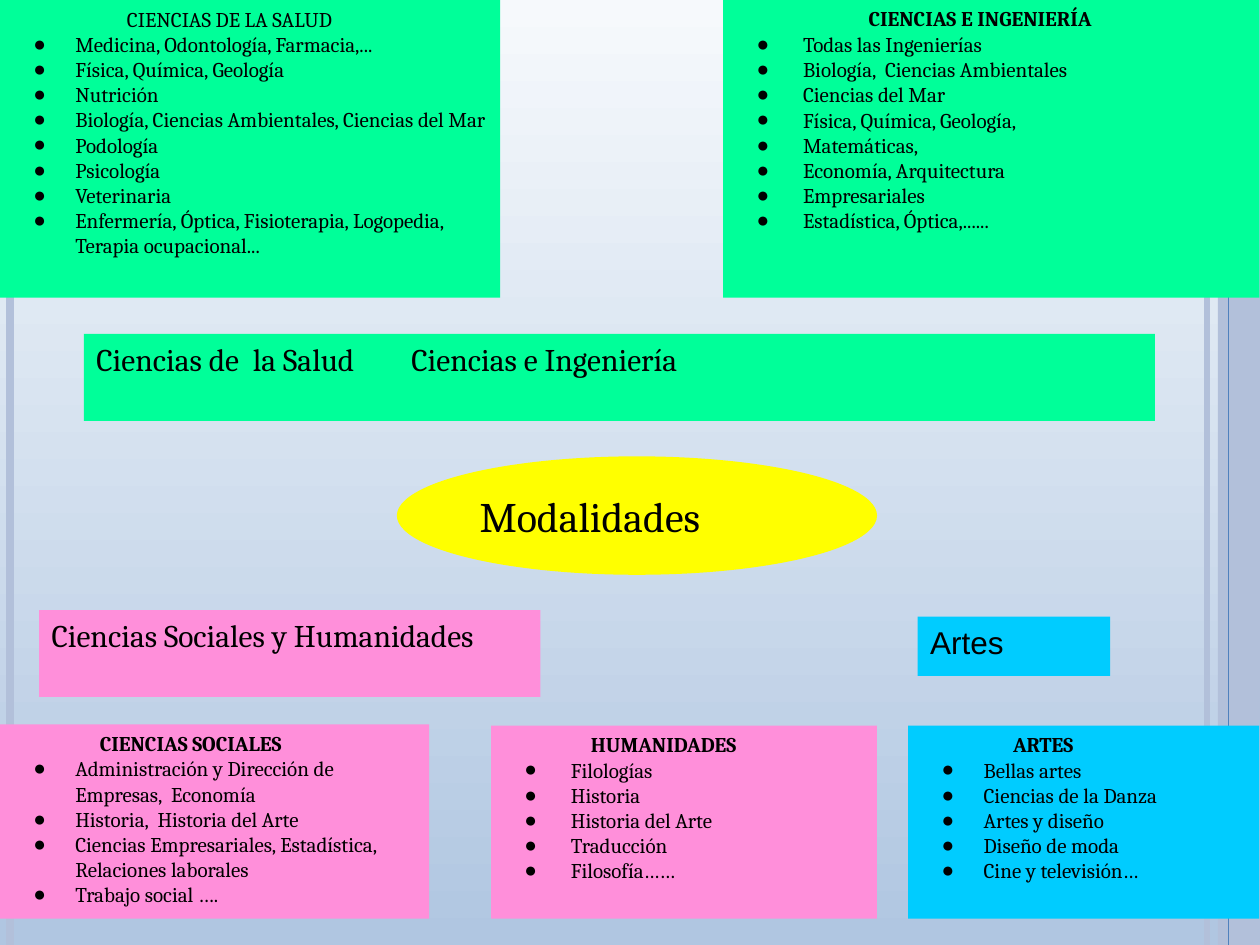
"""Build the slide of study options grouped by school track."""
from dataclasses import dataclass

from lxml import etree
from pptx import Presentation
from pptx.dml.color import RGBColor
from pptx.enum.shapes import MSO_CONNECTOR, MSO_SHAPE
from pptx.enum.text import MSO_ANCHOR, PP_ALIGN
from pptx.oxml.ns import qn
from pptx.util import Pt

RECTANGLE = MSO_SHAPE.RECTANGLE
OVAL = MSO_SHAPE.OVAL
STRAIGHT = MSO_CONNECTOR.STRAIGHT
TOP = MSO_ANCHOR.TOP
MIDDLE = MSO_ANCHOR.MIDDLE
LEFT = PP_ALIGN.LEFT
BLANK_LAYOUT = 6


@dataclass(frozen=True)
class Theme:
    """Colours, fonts, type sizes and insets of the slide."""
    sky: str = "F6F9FC"
    dusk: str = "B0C6E1"
    rail: str = "B2C0DA"
    blue: str = "4F81BD"
    green: str = "00FF99"
    pink: str = "FF8FDA"
    cyan: str = "00CCFF"
    yellow: str = "FFFF00"
    ink: str = "000000"
    serif: str = "Cambria"
    sans: str = "Arial"
    hub_size: float = 24
    track_size: float = 18
    list_size: float = 12
    inset_x: float = 7.2
    inset_y: float = 3.6
    bullet_at: float = 12


THEME = Theme()
WIDTH, HEIGHT = 720, 540

RAILS = [
    (689.8, THEME.rail, 3),
    (5.8, THEME.rail, 4.5),
    (707.8, THEME.blue, 1.5),
]

HEALTH = ["Medicina, Odontología, Farmacia,...", "Física, Química, Geología", "Nutrición",
          "Biología, Ciencias Ambientales, Ciencias del Mar", "Podología", "Psicología",
          "Veterinaria",
          "Enfermería, Óptica, Fisioterapia, Logopedia, Terapia ocupacional..."]
ENGINEERING = ["Todas las Ingenierías", "Biología,  Ciencias Ambientales", "Ciencias del Mar",
               "Física, Química, Geología,", "Matemáticas,", "Economía, Arquitectura",
               "Empresariales", "Estadística, Óptica,......"]
SOCIAL = ["Administración y Dirección de Empresas,  Economía",
          "Historia,  Historia del Arte",
          "Ciencias Empresariales, Estadística, Relaciones laborales",
          "Trabajo social …."]
HUMANITIES = ["Filologías", "Historia", "Historia del Arte", "Traducción", "Filosofía……"]
ARTS = ["Bellas artes", "Ciencias de la Danza", "Artes y diseño", "Diseño de moda",
        "Cine y televisión…"]


def color(code):
    """Turn a hex code into a colour."""
    return RGBColor.from_string(code)


def paint_background(page):
    """Fill the page with a top-to-bottom gradient."""
    fill = page.background.fill
    fill.gradient()
    fill.gradient_angle = 270
    for stop, code in zip(fill.gradient_stops, (THEME.sky, THEME.dusk)):
        stop.color.rgb = color(code)


def add_rail(page, x, code, weight):
    """Draw a full-height vertical line."""
    rail = page.shapes.add_connector(STRAIGHT, Pt(x), Pt(0), Pt(x), Pt(HEIGHT))
    rail.line.color.rgb = color(code)
    rail.line.width = Pt(weight)
    etree.SubElement(rail._element.spPr, qn("a:effectLst"))


def set_frame(shape, anchor=TOP, top=THEME.inset_y):
    """Set wrapping, anchor and insets of a text frame."""
    frame = shape.text_frame
    frame.word_wrap = True
    frame.vertical_anchor = anchor
    frame.margin_left = frame.margin_right = Pt(THEME.inset_x)
    frame.margin_top, frame.margin_bottom = Pt(top), Pt(THEME.inset_y)


def add_box(page, place, code, kind=RECTANGLE, **frame_format):
    """Add a flat filled shape without an outline."""
    box = page.shapes.add_shape(kind, *map(Pt, place))
    box.shadow.inherit = False
    box.fill.solid()
    box.fill.fore_color.rgb = color(code)
    box.line.fill.background()
    set_frame(box, **frame_format)
    return box


def write_text(box, text, size=THEME.list_size, font=THEME.serif, bold=False,
               indent=0, bullet=False, tab=None):
    """Write one formatted paragraph into a box."""
    frame = box.text_frame
    para = frame.paragraphs[0]
    if para.runs:
        para = frame.add_paragraph()
    para.alignment = LEFT
    span = para.add_run()
    span.text = text
    span.font.size, span.font.name, span.font.bold = Pt(size), font, bold
    span.font.color.rgb = color(THEME.ink)
    properties = para._p.get_or_add_pPr()
    properties.set("marL", str(Pt(indent)))
    properties.set("indent", str(Pt(THEME.bullet_at - indent) if bullet else 0))
    if bullet:
        etree.SubElement(properties, qn("a:buFont"), typeface=THEME.sans)
        etree.SubElement(properties, qn("a:buChar"), char="●")
    if tab:
        stops = etree.SubElement(properties, qn("a:tabLst"))
        etree.SubElement(stops, qn("a:tab"), pos=str(Pt(tab)), algn="l")


def add_list(page, place, code, items, heading=None, heading_indent=0, bold=True,
             indent=36, **frame_format):
    """Add a filled box with an optional heading and a bulleted list."""
    box = add_box(page, place, code, **frame_format)
    if heading:
        write_text(box, heading, bold=bold, indent=heading_indent)
    for item in items:
        write_text(box, item, indent=indent, bullet=True)


def add_label(page, place, text, **text_format):
    """Add a plain text box with one paragraph."""
    label = page.shapes.add_textbox(*map(Pt, place))
    set_frame(label)
    write_text(label, text, **text_format)


def add_tracks(page):
    """Add the central oval and the track bars around it."""
    hub = add_box(page, (226.8, 260.8, 274.4, 67.7), THEME.yellow, kind=OVAL, anchor=MIDDLE)
    write_text(hub, "Modalidades", size=THEME.hub_size)
    tracks = [
        ((48, 190.8, 612, 49.7), THEME.green, "Ciencias de  la Salud\tCiencias e Ingeniería",
         {"tab": 270}),
        ((22.4, 348.6, 286.4, 49.7), THEME.pink, "Ciencias Sociales y Humanidades", {}),
        ((524.4, 352.3, 110, 34), THEME.cyan, "Artes", {"font": THEME.sans}),
    ]
    for place, code, text, text_format in tracks:
        write_text(add_box(page, place, code), text, size=THEME.track_size, **text_format)


def main():
    """Build the deck and save it."""
    deck = Presentation()
    deck.slide_width, deck.slide_height = Pt(WIDTH), Pt(HEIGHT)
    page = deck.slides.add_slide(deck.slide_layouts[BLANK_LAYOUT])
    paint_background(page)
    for rail in RAILS:
        add_rail(page, *rail)
    add_box(page, (696, 0, 24, HEIGHT), THEME.rail)
    add_rail(page, 702, THEME.blue, 0.75)
    add_tracks(page)
    add_list(page, (0, 0, 285.8, 170.2), THEME.green, HEALTH, "CIENCIAS DE LA SALUD", 65.5,
             bold=False)
    add_list(page, (0, 414, 245.3, 111), THEME.pink, SOCIAL, "CIENCIAS SOCIALES", 50)
    add_list(page, (280.6, 414.7, 220.6, 110.3), THEME.pink, HUMANITIES, "HUMANIDADES", 50,
             indent=38.6)
    add_list(page, (413.2, 0, 306.4, 170.2), THEME.green, ENGINEERING, indent=38.6, top=18)
    add_list(page, (519, 414.7, 200.5, 110.3), THEME.cyan, ARTS, "ARTES", 52.8)
    add_label(page, (489.3, -0.5, 200, 21), "CIENCIAS E INGENIERÍA", bold=True)
    deck.save("out.pptx")


if __name__ == "__main__":
    main()
